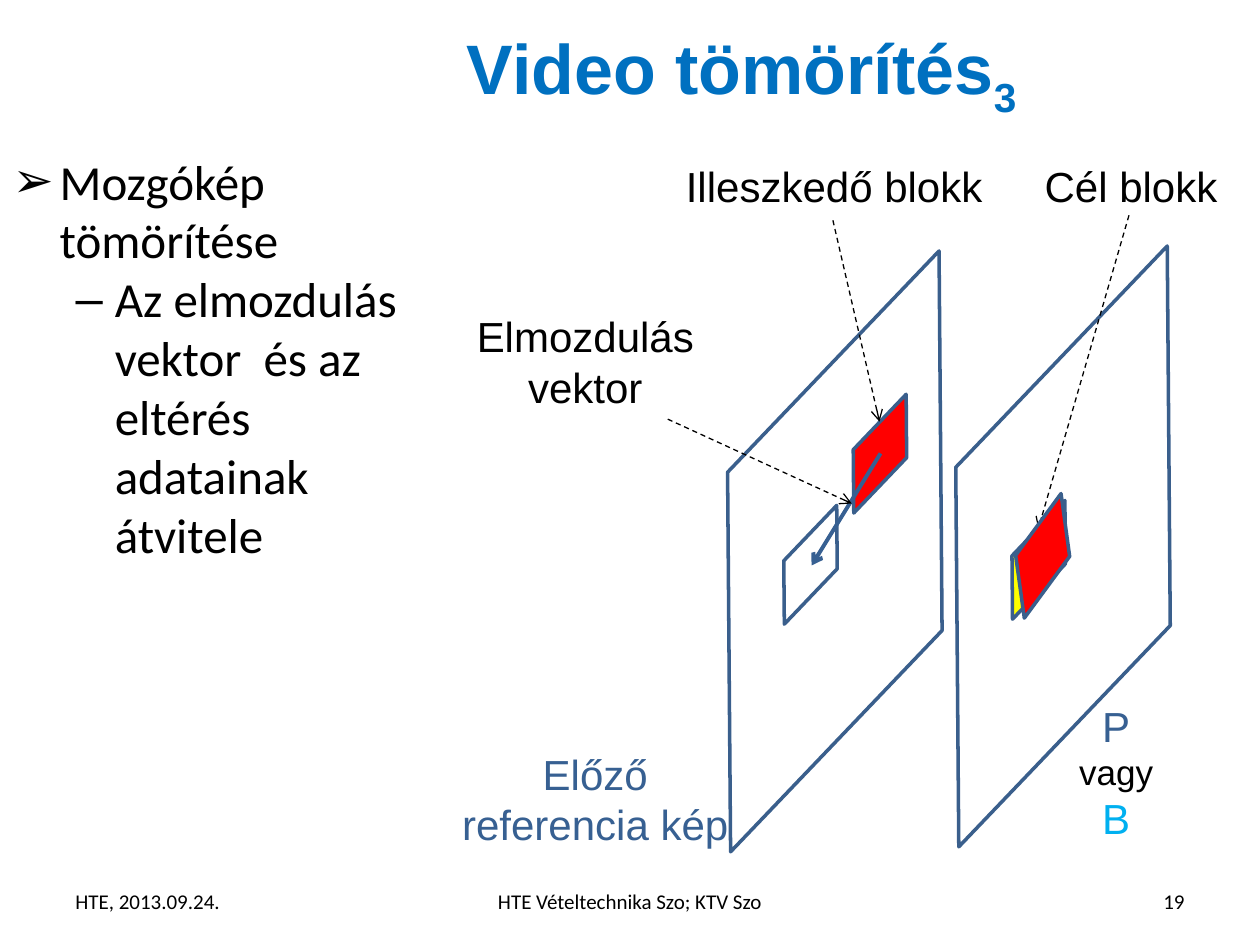
import pptx
import pptx.dml.color
import pptx.enum.dml
import pptx.enum.shapes
import pptx.enum.text
import pptx.oxml
import pptx.oxml.ns
import pptx.util
from lxml import etree

Cm, Pt = pptx.util.Cm, pptx.util.Pt
RGBColor = pptx.dml.color.RGBColor
ALIGN = pptx.enum.text.PP_ALIGN
ANCHOR = pptx.enum.text.MSO_ANCHOR

BLACK = RGBColor(0x00, 0x00, 0x00)
WHITE = RGBColor(0xFF, 0xFF, 0xFF)
RED = RGBColor(0xFF, 0x00, 0x00)
YELLOW = RGBColor(0xFF, 0xFF, 0x00)
TITLE_BLUE = RGBColor(0x00, 0x70, 0xC0)
EDGE_BLUE = RGBColor(0x3A, 0x5F, 0x8C)
DARK_BLUE = RGBColor(0x37, 0x60, 0x92)
LIGHT_BLUE = RGBColor(0x00, 0xB0, 0xF0)

FRAME_SIZE = (11.66, 5.33)
BLOCK_SIZE = (2.46, 0.89)
BLOCK_OFFSET = (4.11, 2.49)  # same place in both frames
TURN = 313.7


def sub_element(parent, tag, **attrs):
    el = etree.SubElement(parent, pptx.oxml.ns.qn(tag))
    for name, value in attrs.items():
        el.set(name, str(value))
    return el


def add_run(p, text, size=24, font="Arial", color=BLACK, bold=False, baseline=0):
    r = p.add_run()
    r.text = text
    r.font.size, r.font.name, r.font.bold = Pt(size), font, bold
    r.font.color.rgb = color
    if baseline:
        r.font._element.set("baseline", str(baseline))


def place(sp, x, y, w, h):
    sp.left, sp.top, sp.width, sp.height = Cm(x), Cm(y), Cm(w), Cm(h)


def add_label(s, x, y, w, h, text="", align=ALIGN.CENTER, anchor=ANCHOR.TOP, **fmt):
    """Add a wrapped text box and return its text frame."""
    tf = s.shapes.add_textbox(Cm(x), Cm(y), Cm(w), Cm(h)).text_frame
    tf.word_wrap = True
    tf.vertical_anchor = anchor
    tf.paragraphs[0].alignment = align
    if text:
        add_run(tf.paragraphs[0], text, **fmt)
    return tf


def add_sheet(s, x, y, size, fill=None, turn=TURN):
    """Add a turned parallelogram that looks like an upright sheet."""
    sp = s.shapes.add_shape(pptx.enum.shapes.MSO_SHAPE.PARALLELOGRAM,
                            Cm(x), Cm(y), Cm(size[0]), Cm(size[1]))
    sp.adjustments[0] = 1.03
    sp.rotation = turn
    sp.shadow.inherit = False
    if fill is None:
        sp.fill.background()
    else:
        sp.fill.solid()
        sp.fill.fore_color.rgb = fill
    sp.line.color.rgb = EDGE_BLUE
    sp.line.width = Pt(2)


def add_arrow(s, x1, y1, x2, y2, color=BLACK, width=0.75, dashed=True):
    line = s.shapes.add_connector(pptx.enum.shapes.MSO_CONNECTOR.STRAIGHT,
                                  Cm(x1), Cm(y1), Cm(x2), Cm(y2))
    line.line.color.rgb = color
    line.line.width = Pt(width)
    if dashed:
        line.line.dash_style = pptx.enum.dml.MSO_LINE.DASH
    sub_element(line.line._get_or_add_ln(), "a:tailEnd", type="arrow")
    sub_element(line._element.spPr, "a:effectLst")


def fill_title(s, x, y, w, h):
    sp = s.shapes.title
    place(sp, x, y, w, h)
    tf = sp.text_frame
    tf.auto_size = pptx.enum.text.MSO_AUTO_SIZE.NONE
    tf.vertical_anchor = ANCHOR.MIDDLE
    p = tf.paragraphs[0]
    p.alignment = ALIGN.CENTER
    fmt = dict(size=40, color=TITLE_BLUE, bold=True)
    add_run(p, "Video tömörítés", **fmt)
    add_run(p, "3", baseline=-25000, **fmt)


def fill_bullets(s, x, y, w, h):
    sp = s.placeholders[1]
    place(sp, x, y, w, h)
    tf = sp.text_frame
    tf.auto_size = pptx.enum.text.MSO_AUTO_SIZE.NONE
    items = [
        ("Mozgókép tömörítése", "➢", 0.95, 0.95),
        ("Az elmozdulás vektor  és az eltérés adatainak átvitele", "–", 2.06, 0.79),
    ]
    for level, (text, mark, margin, hang) in enumerate(items):
        p = tf.add_paragraph() if level else tf.paragraphs[0]
        p.level = level
        p.space_before = Pt(0)
        pPr = p._p.get_or_add_pPr()
        pPr.set("marL", str(Cm(margin)))
        pPr.set("indent", str(-Cm(hang)))
        sub_element(pPr, "a:buFont", typeface="Arial")
        sub_element(pPr, "a:buChar", char=mark)
        add_run(p, text, size=28, font="Calibri")


def add_footer(s, x, y, w, h):
    side, middle = 5.93, 9.0
    parts = [
        (0, side, "HTE, 2013.09.24.", ALIGN.LEFT),
        ((w - middle) / 2, middle, "HTE Vételtechnika Szo; KTV Szo", ALIGN.CENTER),
        (w - side, side, "19", ALIGN.RIGHT),
    ]
    for dx, width, text, align in parts:
        add_label(s, x + dx, y, width, h, text, align, ANCHOR.MIDDLE,
                  size=12, font="Calibri")


def add_frame(s, x, y, block_fill=None):
    """Add one video frame with the block at the target position."""
    add_sheet(s, x, y, FRAME_SIZE, WHITE)
    add_sheet(s, x + BLOCK_OFFSET[0], y + BLOCK_OFFSET[1], BLOCK_SIZE, block_fill)


def add_motion_diagram(s, x, y):
    ref_x, ref_y = x + 2.3, y + 5.33
    target_x, target_y = x + 6.9, y + 5.23

    add_frame(s, target_x, target_y, YELLOW)
    add_arrow(s, x + 14.06, y + 1.22, x + 12.23, y + 7.54)
    add_frame(s, ref_x, ref_y)
    add_sheet(s, ref_x + 5.51, ref_y + 0.25, BLOCK_SIZE, RED)
    add_arrow(s, x + 9.05, y + 6.02, x + 7.66, y + 8.28,
              color=DARK_BLUE, width=2.25, dashed=False)
    add_arrow(s, x + 8.09, y + 1.32, x + 9.03, y + 5.38)
    add_arrow(s, x + 4.76, y + 5.33, x + 8.47, y + 7.03)
    add_sheet(s, target_x + 4.19, target_y + 2.41, BLOCK_SIZE, RED, turn=306.3)

    add_label(s, x + 11.8, y, 4.6, 1.27, "Cél blokk")
    add_label(s, x + 4.61, y, 7.01, 1.27, "Illeszkedő blokk")
    add_label(s, x + 0.6, y + 3.02, 5, 2.31, "Elmozdulás vektor")
    add_label(s, x, y + 11.84, 6.6, 2.31, "Előző referencia kép", color=DARK_BLUE)

    tf = add_label(s, x + 12.2, y + 10.87, 3.2, 3.18)
    p = tf.paragraphs[0]
    add_run(p, "P", color=DARK_BLUE)
    p.add_line_break()
    add_run(p, "vagy", size=20)
    p = tf.add_paragraph()
    p.alignment = ALIGN.CENTER
    add_run(p, "B", color=LIGHT_BLUE)


def main():
    prs = pptx.Presentation()
    prs.slide_width, prs.slide_height = Cm(25.4), Cm(19.05)
    s = prs.slides.add_slide(prs.slide_layouts[1])
    fill_title(s, 4.4, 0, 21.1, 2.92)
    add_footer(s, 1.27, 17.65, 22.86, 1.02)
    add_motion_diagram(s, 8.7, 3.12)
    fill_bullets(s, 0, 2.92, 8.5, 14.1)
    prs.save("out.pptx")


if __name__ == "__main__":
    main()
